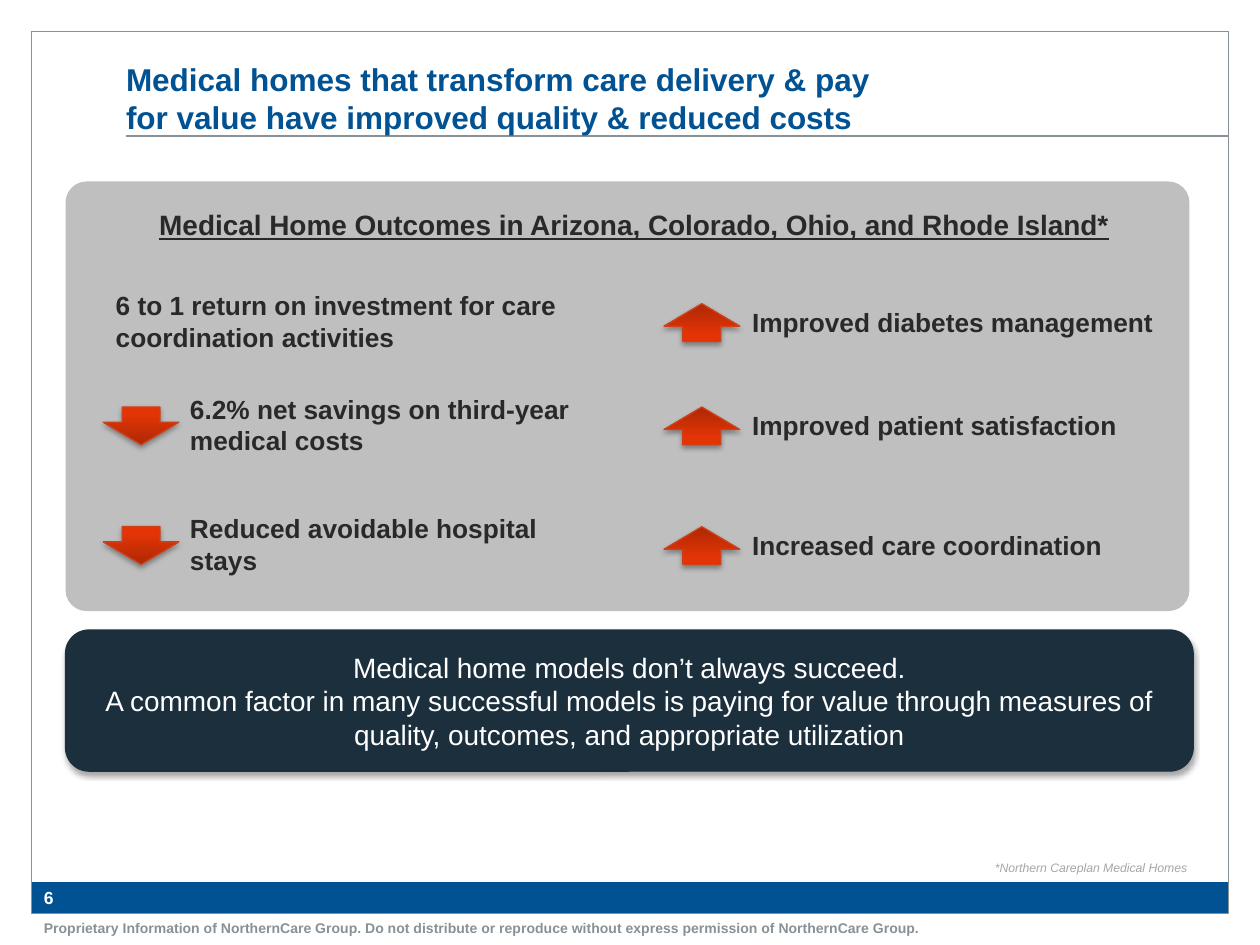
from lxml import etree
from pptx import Presentation
from pptx.dml.color import RGBColor
from pptx.enum.shapes import MSO_CONNECTOR, MSO_SHAPE
from pptx.enum.text import MSO_ANCHOR, PP_ALIGN
from pptx.oxml.ns import qn
from pptx.util import Inches, Pt

RECT, ROUND, DOWN = MSO_SHAPE.RECTANGLE, MSO_SHAPE.ROUNDED_RECTANGLE, MSO_SHAPE.DOWN_ARROW
LINE = MSO_CONNECTOR.STRAIGHT
TOP, MIDDLE, BOTTOM = MSO_ANCHOR.TOP, MSO_ANCHOR.MIDDLE, MSO_ANCHOR.BOTTOM
LEFT, CENTER, RIGHT = PP_ALIGN.LEFT, PP_ALIGN.CENTER, PP_ALIGN.RIGHT
BLUE, GRAY, NAVY, INK, WHITE = "005293", "879196", "1C2F3D", "292929", "FFFFFF"
GLOW = [(0, "AE2804"), (80, "E23406"), (100, "E73201")]


def color(code):
    return RGBColor.from_string(code)


def node(parent, tag, **attrs):
    return etree.SubElement(parent, qn(tag), {key: str(val) for key, val in attrs.items()})


class Deck:
    """Holds the font and the current slide, and draws each kind of element."""

    def __init__(self, font):
        self.font = font
        self.prs = Presentation()
        self.prs.slide_width, self.prs.slide_height = Inches(10), Inches(7.5)
        self.slide = self.prs.slides.add_slide(self.prs.slide_layouts[6])

    def shape(self, kind, box, fill=None, line=None, width=0.75, adj=(), shade=False):
        item = self.slide.shapes.add_shape(kind, *map(Inches, box))
        item.shadow.inherit = False
        for i, val in enumerate(adj):
            item.adjustments[i] = val
        if fill:
            item.fill.solid()
            item.fill.fore_color.rgb = color(fill)
        else:
            item.fill.background()
        if line:
            item.line.color.rgb = color(line)
            item.line.width = Pt(width)
        else:
            item.line.fill.background()
        if shade:
            self.shade(item)
        return item

    def shade(self, item):
        effects = item.element.spPr.find(qn("a:effectLst"))
        outer = node(effects, "a:outerShdw", blurRad=Pt(3.1), dist=Pt(1.8),
                     dir=5400000, rotWithShape=0)
        tint = node(outer, "a:srgbClr", val="000000")
        node(tint, "a:alpha", val=35000)

    def arrow(self, left, top, turn=0):
        item = self.shape(DOWN, (left, top, 0.6, 0.3), line="CF411B",
                          adj=(0.5, 0.595), shade=True)
        item.rotation = turn
        item.fill.gradient()
        item.fill.gradient_angle = 90
        stops = item.element.spPr.find(".//" + qn("a:gsLst"))
        for old in list(stops):
            stops.remove(old)
        for pos, code in GLOW:
            node(node(stops, "a:gs", pos=pos * 1000), "a:srgbClr", val=code)

    def rule(self, start, end, code):
        item = self.slide.shapes.add_connector(LINE, *map(Inches, start + end))
        item.line.color.rgb = color(code)
        item.line.width = Pt(0.75)
        node(item.element.spPr, "a:effectLst")

    def text(self, box, words, size, code, **style):
        item = self.slide.shapes.add_textbox(*map(Inches, box))
        self.label(item, words, size, code, **style)

    def label(self, item, words, size, code, bold=True, italic=False, under=False,
              align=LEFT, anchor=TOP, pads=(0.1, 0.05, 0.1, 0.05)):
        frame = item.text_frame
        frame.word_wrap = True
        frame.vertical_anchor = anchor
        (frame.margin_left, frame.margin_top,
         frame.margin_right, frame.margin_bottom) = map(Inches, pads)
        par = frame.paragraphs[0]
        par.alignment = align
        for i, part in enumerate(words.split("\n")):
            if i:
                par.add_line_break()
            run = par.add_run()
            run.text = part
            font = run.font
            font.name, font.size, font.bold = self.font, Pt(size), bold
            font.italic, font.underline = italic, under
            font.color.rgb = color(code)


def main():
    deck = Deck("Arial")
    deck.shape(RECT, (0.25, 7, 9.5, 0.25), BLUE)
    deck.shape(RECT, (0.25, 0.25, 9.5, 7), line=GRAY, width=1)
    deck.rule((9.75, 1.08), (1, 1.08), GRAY)
    deck.text((1, 0.25, 6.28, 0.83),
              "Medical homes that transform care delivery & pay for value "
              "have improved quality & reduced costs",
              18, BLUE, anchor=BOTTOM, pads=(0, 0, 0, 0))
    deck.text((0.25, 7, 0.67, 0.25), "6", 10, WHITE, anchor=MIDDLE, pads=(0.1, 0, 0, 0))
    deck.text((0.25, 7.25, 9.5, 0.25),
              "Proprietary Information of NorthernCare Group. Do not distribute or "
              "reproduce without express permission of NorthernCare Group.", 8, GRAY)

    panel = deck.shape(ROUND, (0.52, 5, 8.95, 1.12), NAVY, NAVY, shade=True)
    deck.label(panel, "Medical home models don’t always succeed.\n"
               "A common factor in many successful models is paying for value through "
               "measures of quality, outcomes, and appropriate utilization",
               16, WHITE, bold=False, align=CENTER, anchor=MIDDLE, pads=(0.1,) * 4)
    deck.shape(ROUND, (0.52, 1.44, 8.92, 3.41), "BFBFBF", adj=(0.049,))
    deck.text((0.55, 1.6, 8.97, 0.37),
              "Medical Home Outcomes in Arizona, Colorado, Ohio, and Rhode Island*",
              16, INK, under=True, align=CENTER)

    rows = [
        (2.56, "6 to 1 return on investment for care coordination activities",
         "Improved diabetes management"),
        (3.38, "6.2% net savings on third-year medical costs",
         "Improved patient satisfaction"),
        (4.33, "Reduced avoidable hospital stays", "Increased care coordination"),
    ]
    for i, (mid, cost, gain) in enumerate(rows):
        left = 1.41 if i else 0.82
        deck.text((left, mid - 0.31, 4.77 - left, 0.61), cost, 15, INK)
        if i:
            deck.arrow(0.82, mid - 0.15)
        deck.arrow(5.27, mid - 0.15, 180)
        deck.text((5.87, mid - 0.18, 3.59, 0.35), gain, 15, INK)

    deck.text((3.19, 6.78, 6.33, 0.22), "*Northern Careplan Medical Homes", 7, "A6A6A6",
              bold=False, italic=True, align=RIGHT)
    deck.prs.save("out.pptx")


if __name__ == "__main__":
    main()
